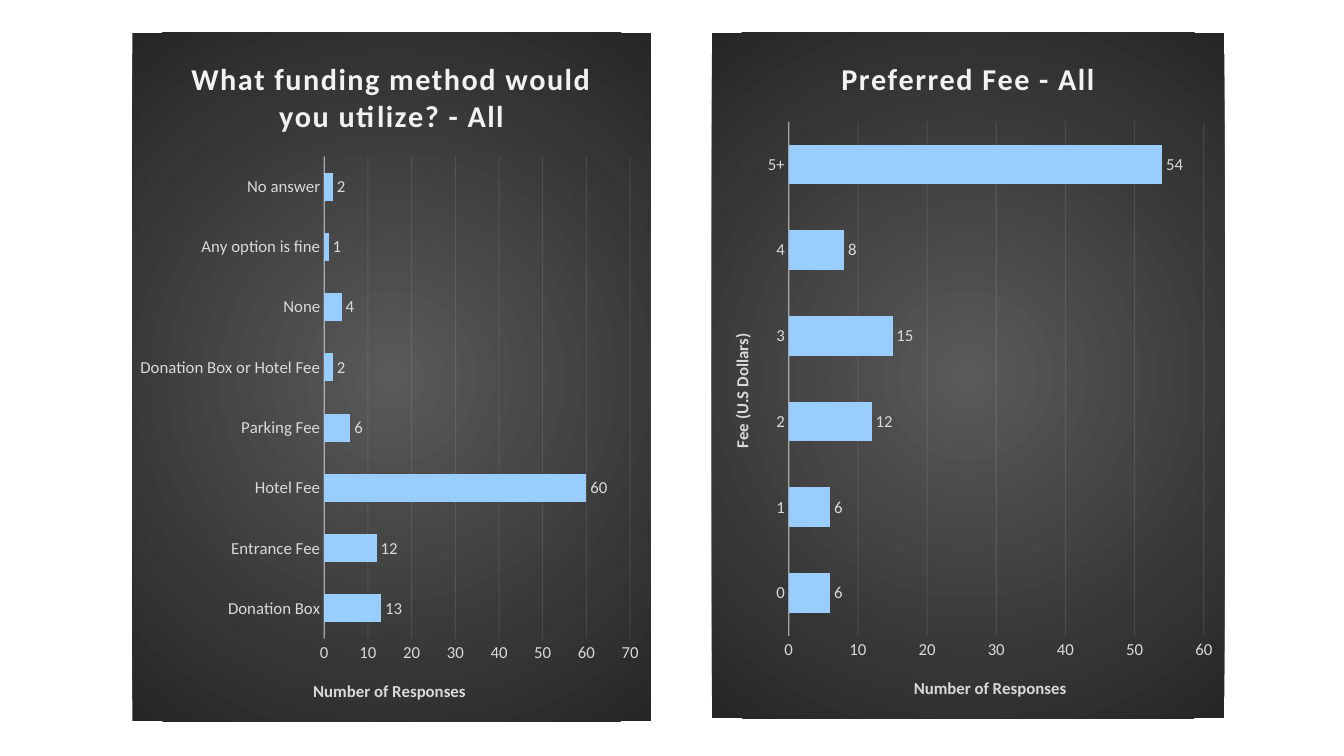
from dataclasses import dataclass

from lxml import etree
from pptx import Presentation
from pptx.chart.data import CategoryChartData
from pptx.dml.color import RGBColor
from pptx.enum.chart import XL_CHART_TYPE as ChartType
from pptx.enum.chart import XL_LABEL_POSITION as LabelPosition
from pptx.enum.chart import XL_TICK_MARK as TickMark
from pptx.oxml import parse_xml
from pptx.oxml.ns import nsdecls, qn
from pptx.util import Pt

EMU_PER_PX = 9525


@dataclass(frozen=True)
class Theme:
    font: str = "Calibri"
    title_size: float = 21.6
    text_size: int = 12
    title: str = "F2F2F2"
    text: str = "D9D9D9"
    line: str = "F2F2F2"
    bar: str = "99CCFF"
    panel_center: str = "595959"
    panel_edge: str = "262626"


THEME = Theme()

FUNDING = {
    "Donation Box": 13,
    "Entrance Fee": 12,
    "Hotel Fee": 60,
    "Parking Fee": 6,
    "Donation Box or Hotel Fee": 2,
    "None": 4,
    "Any option is fine": 1,
    "No answer": 2,
}
PREFERRED_FEE = {"0": 6, "1": 6, "2": 12, "3": 15, "4": 8, "5+": 54}


def px(length):
    return length * EMU_PER_PX


def style_font(font, size, color, bold=False):
    font.name = THEME.font
    font.size = Pt(size)
    font.bold = bold
    font.color.rgb = RGBColor.from_string(color)


def write_title(owner, wording, size, color, spacing=0):
    owner.has_title = True
    frame = (owner.chart_title if hasattr(owner, "chart_title") else owner.axis_title).text_frame
    frame.text = wording
    paragraph = frame.paragraphs[0]
    style_font(paragraph.font, size, color, bold=True)
    if spacing:
        paragraph.runs[0].font.bold = True
        for properties in paragraph._p.iter(qn("a:defRPr"), qn("a:rPr")):
            properties.set("spc", str(spacing))


def style_line(line, width, opacity):
    line.color.rgb = RGBColor.from_string(THEME.line)
    line.width = Pt(width)
    color = line.fill._xPr.find(".//" + qn("a:srgbClr"))
    etree.SubElement(color, qn("a:alpha")).set("val", str(opacity * 1000))


def style_axis(axis):
    axis.major_tick_mark = axis.minor_tick_mark = TickMark.NONE
    style_font(axis.tick_labels.font, THEME.text_size, THEME.text)


def fill_panel(chart):
    panel = parse_xml(
        f'<c:spPr {nsdecls("c", "a")}><a:gradFill><a:gsLst>'
        f'<a:gs pos="0"><a:srgbClr val="{THEME.panel_center}"/></a:gs>'
        f'<a:gs pos="100000"><a:srgbClr val="{THEME.panel_edge}"/></a:gs>'
        '</a:gsLst><a:path path="circle">'
        '<a:fillToRect l="50000" t="50000" r="50000" b="50000"/>'
        "</a:path></a:gradFill><a:ln><a:noFill/></a:ln></c:spPr>"
    )
    chart.element.find(qn("c:chart")).addnext(panel)


def place_plot(chart, plot_box):
    plot_area = chart.element.find(".//" + qn("c:plotArea"))
    for layout in plot_area.findall(qn("c:layout")):
        plot_area.remove(layout)
    sizes = "".join(f'<c:{side} val="{part}"/>' for side, part in zip("xywh", plot_box))
    plot_area.insert(0, parse_xml(
        f'<c:layout {nsdecls("c")}><c:manualLayout><c:layoutTarget val="inner"/>'
        f'<c:xMode val="edge"/><c:yMode val="edge"/>{sizes}</c:manualLayout></c:layout>'
    ))


def add_survey_chart(slide, box, wording, answers, plot_box, category_title=None):
    survey = CategoryChartData()
    survey.categories = list(answers)
    survey.add_series("Series 1", list(answers.values()))
    chart = slide.shapes.add_chart(ChartType.BAR_CLUSTERED, *map(px, box), survey).chart
    style_font(chart.font, THEME.text_size, THEME.text)
    chart.has_legend = False
    write_title(chart, wording, THEME.title_size, THEME.title, spacing=100)
    chart.chart_title.include_in_layout = False

    answer_axis, count_axis = chart.category_axis, chart.value_axis
    for axis in (answer_axis, count_axis):
        style_axis(axis)
    write_title(count_axis, "Number of Responses", THEME.text_size, THEME.text)
    if category_title:
        write_title(answer_axis, category_title, THEME.text_size, THEME.text)
    style_line(answer_axis.format.line, 1, 54)
    count_axis.format.line.fill.background()
    count_axis.has_major_gridlines = True
    style_line(count_axis.major_gridlines.format.line, 0.75, 10)

    bars = chart.plots[0]
    bars.gap_width = 115
    bars.overlap = -20
    bars.vary_by_categories = False
    responses = bars.series[0]
    responses.format.fill.solid()
    responses.format.fill.fore_color.rgb = RGBColor.from_string(THEME.bar)
    responses.format.line.fill.background()
    labels = responses.data_labels
    labels.show_value = True
    labels.position = LabelPosition.OUTSIDE_END
    style_font(labels.font, THEME.text_size, THEME.text)

    fill_panel(chart)
    place_plot(chart, plot_box)


def main():
    deck = Presentation()
    deck.slide_width, deck.slide_height = px(1280), px(720)
    slide = deck.slides.add_slide(deck.slide_layouts[6])
    add_survey_chart(
        slide, (126, 31, 494, 656), "What funding method would you utilize? - All",
        FUNDING, (0.37, 0.18, 0.59, 0.7),
    )
    add_survey_chart(
        slide, (678, 31, 488, 653), "Preferred Fee - All",
        PREFERRED_FEE, (0.15, 0.13, 0.81, 0.75), "Fee (U.S Dollars)",
    )
    deck.save("out.pptx")


if __name__ == "__main__":
    main()
